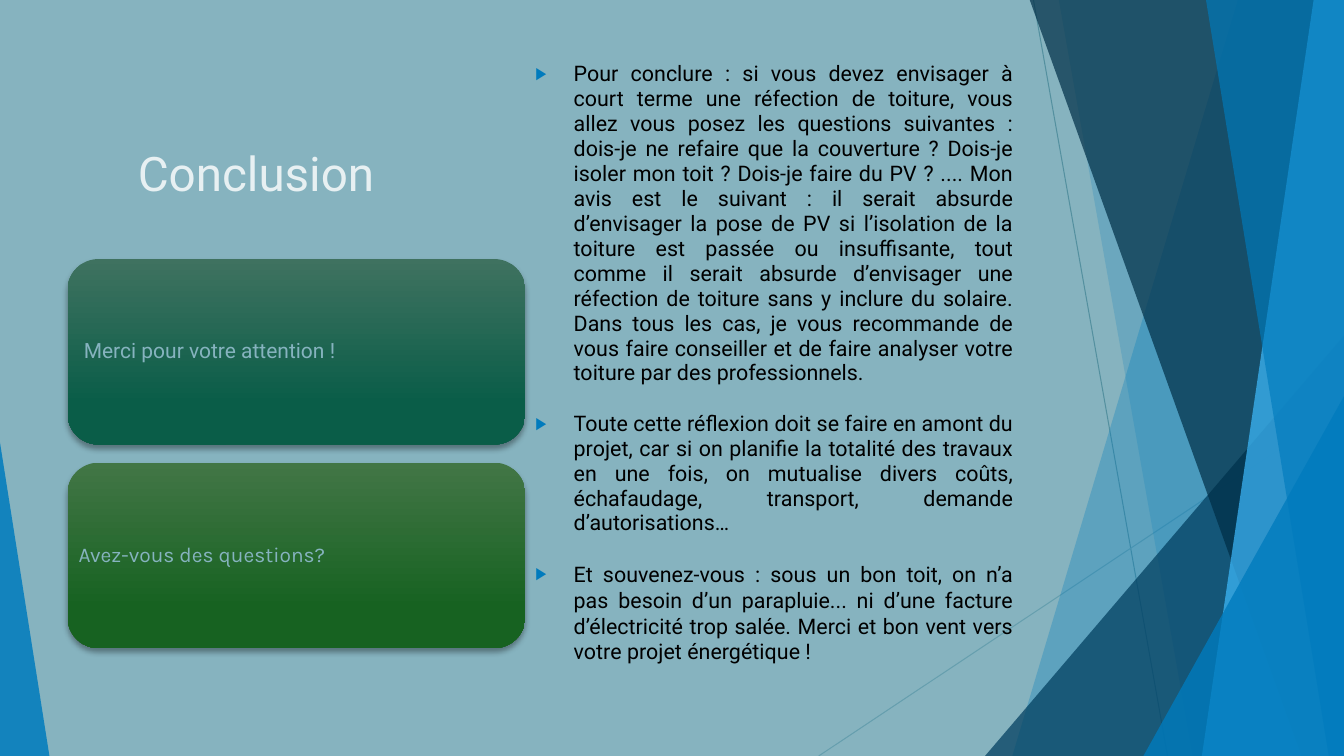
from dataclasses import dataclass

import lxml.etree
import pptx
import pptx.dml.color
import pptx.enum.shapes
import pptx.enum.text
import pptx.oxml.ns
import pptx.util

PX = 9144  # EMU in one px, 100 px to the inch
WIDE, HIGH = 1333, 750
BLUE, MIST = "007BBD", "86B3BF"
FONT = "Roboto"
ALIGN = pptx.enum.text.PP_ALIGN
ANCHOR = pptx.enum.text.MSO_ANCHOR
SHAPE = pptx.enum.shapes.MSO_SHAPE
qn = pptx.oxml.ns.qn


@dataclass
class Band:
    """Strip from the top edge to the bottom edge, by its corner x values."""
    top: tuple[int, int]
    base: tuple[int, int]
    color: str
    alpha: int


@dataclass
class Wedge:
    """Triangle standing on the bottom edge, with its apex at one side."""
    left: int
    top: int
    width: int
    apex: int
    color: str
    alpha: int


@dataclass
class Card:
    text: str
    font: str
    light: str
    dark: str


LINES = [((1025, 0), (1158, HIGH), "54909F"),
         ((WIDE, 403), (812, HIGH), "669FAE")]

DECOR = [
    Band((1228, WIDE), (1004, WIDE), BLUE, 30),
    Band((1050, WIDE), (1183, WIDE), BLUE, 20),
    Wedge(977, 333, 356, 1, "003D5E", 72),
    Band((1021, WIDE), (1291, WIDE), "002E46", 70),
    Band((1303, WIDE), (1192, WIDE), "3EBCFF", 70),
    Band((1196, WIDE), (1318, WIDE), BLUE, 65),
    Wedge(1134, 393, 199, 1, BLUE, 80),
    Wedge(0, 439, 49, 0, BLUE, 85),
]

CARDS = [
    Card(" Merci pour votre attention !", FONT, "3F7260", "0A5D48"),
    Card("Avez-vous des questions?", "Karla", "427646", "176221"),
]

POINTS = [
    "Pour conclure : si vous devez envisager à court terme une réfection de "
    "toiture, vous allez vous posez les questions suivantes : dois-je ne "
    "refaire que la couverture ? Dois-je isoler mon toit ? Dois-je faire du "
    "PV ? .... Mon avis est le suivant : il serait absurde d’envisager la "
    "pose de PV si l’isolation de la toiture est passée ou insuffisante, tout "
    "comme il serait absurde d’envisager une réfection de toiture sans y "
    "inclure du solaire. Dans tous les cas, je vous recommande de vous faire "
    "conseiller et de faire analyser votre toiture par des professionnels.",
    "Toute cette réflexion doit se faire en amont du projet, car si on "
    "planifie la totalité des travaux en une fois, on mutualise divers coûts, "
    "échafaudage, transport, demande d’autorisations…",
    "Et souvenez-vous : sous un bon toit, on n’a pas besoin d’un parapluie... "
    "ni d’une facture d’électricité trop salée. Merci et bon vent vers votre "
    "projet énergétique !",
]


def rgb(color: str) -> pptx.dml.color.RGBColor:
    return pptx.dml.color.RGBColor.from_string(color)


def add_tag(parent, tag: str, **attrs):
    return lxml.etree.SubElement(parent, qn(tag), attrs)


def style(para, font: str, size: float, color: str) -> None:
    for run in para.runs:
        run.font.name = font
        run.font.size = pptx.util.Pt(size)
        run.font.color.rgb = rgb(color)


def paint(shape, color: str, alpha: int) -> None:
    shape.shadow.inherit = False
    shape.fill.solid()
    shape.fill.fore_color.rgb = rgb(color)
    shape.line.fill.background()
    tint = shape.fill._xPr.find(".//" + qn("a:srgbClr"))
    add_tag(tint, "a:alpha", val=str(alpha * 1000))


def add_line(shapes, start: tuple[int, int], end: tuple[int, int], color: str) -> None:
    kind = pptx.enum.shapes.MSO_CONNECTOR.STRAIGHT
    line = shapes.add_connector(kind, *(v * PX for v in start + end))
    line.line.color.rgb = rgb(color)
    line.line.width = pptx.util.Pt(0.75)
    add_tag(line._element.spPr, "a:effectLst")


def add_band(shapes, band: Band) -> None:
    pen = shapes.build_freeform(band.top[0], -1, scale=PX)
    pen.add_line_segments([(band.top[1], -1), (band.base[1], HIGH),
                           (band.base[0], HIGH)], close=True)
    paint(pen.convert_to_shape(), band.color, band.alpha)


def add_wedge(shapes, wedge: Wedge) -> None:
    shape = shapes.add_shape(SHAPE.ISOSCELES_TRIANGLE, wedge.left * PX, wedge.top * PX,
                             wedge.width * PX, (HIGH - wedge.top) * PX)
    shape.adjustments[0] = wedge.apex
    paint(shape, wedge.color, wedge.alpha)


def place(holder, left: int, top: int, width: int, height: int) -> None:
    holder.left, holder.top = left * PX, top * PX
    holder.width, holder.height = width * PX, height * PX
    holder.text_frame.auto_size = pptx.enum.text.MSO_AUTO_SIZE.NONE
    tree = holder._element.getparent()
    tree.append(holder._element)  # bring in front of the decor


def add_title(title) -> None:
    place(title, 43, 110, 422, 94)
    title.text_frame.text = "Conclusion"
    title.text_frame.vertical_anchor = ANCHOR.BOTTOM
    para = title.text_frame.paragraphs[0]
    para.alignment = ALIGN.CENTER
    style(para, FONT, 34, "E7F0F2")


def add_list(body) -> None:
    place(body, 521, 56, 494, 604)
    frame = body.text_frame
    frame.text = "\n".join(POINTS)
    frame.vertical_anchor = ANCHOR.TOP
    last = len(POINTS) - 1
    for i, para in enumerate(frame.paragraphs):
        props = para._p.get_or_add_pPr()
        props.set("marL", str(38 * PX))
        props.set("indent", str(-38 * PX))
        add_tag(add_tag(props, "a:buClr"), "a:srgbClr", val=BLUE)
        add_tag(props, "a:buSzPct", val="80000")
        add_tag(props, "a:buChar", char="▶")
        para.alignment = ALIGN.JUSTIFY
        para.line_spacing = 1.0 if i == last else 0.97
        para.space_before = pptx.util.Pt(10 if i else 0)
        para.space_after = pptx.util.Pt(0 if i == last else 8)
        style(para, FONT, 15.3, "000000")


def add_card(shapes, card: Card, top: int) -> None:
    # Rounded panel with a gradient and a soft shadow
    panel = shapes.add_shape(SHAPE.ROUNDED_RECTANGLE, 67 * PX, top * PX, 454 * PX, 184 * PX)
    panel.line.fill.background()
    panel.fill.gradient()
    panel.fill.gradient_angle = 270
    looks = [(0, card.light), (0.78, card.dark)]
    for stop, (spot, color) in zip(panel.fill.gradient_stops, looks):
        stop.position = spot
        stop.color.rgb = rgb(color)
    panel.shadow.inherit = False
    glow = add_tag(panel._element.spPr.find(qn("a:effectLst")), "a:outerShdw",
                   blurRad=str(pptx.util.Pt(4)), dist=str(pptx.util.Pt(3)),
                   dir="5400000", rotWithShape="0")
    add_tag(add_tag(glow, "a:srgbClr", val="000000"), "a:alpha", val="35000")

    # Label
    label = shapes.add_textbox(72 * PX, (top + 9) * PX, 443 * PX, 166 * PX)
    frame = label.text_frame
    frame.word_wrap = True
    frame.vertical_anchor = ANCHOR.MIDDLE
    frame.margin_left = frame.margin_right = 6 * PX
    frame.margin_top = frame.margin_bottom = 6 * PX
    frame.text = card.text
    frame.paragraphs[0].line_spacing = 0.9
    style(frame.paragraphs[0], card.font, 15, MIST)


def main() -> None:
    deck = pptx.Presentation()
    deck.slide_width, deck.slide_height = WIDE * PX, HIGH * PX
    slide = deck.slides.add_slide(deck.slide_layouts[1])
    slide.background.fill.solid()
    slide.background.fill.fore_color.rgb = rgb(MIST)
    shapes = slide.shapes

    # Decor
    for start, end, color in LINES:
        add_line(shapes, start, end, color)
    for part in DECOR:
        if isinstance(part, Band):
            add_band(shapes, part)
        else:
            add_wedge(shapes, part)

    # Content
    add_title(shapes.title)
    add_list(slide.placeholders[1])
    for i, card in enumerate(CARDS):
        add_card(shapes, card, 257 + 202 * i)

    deck.save("out.pptx")


if __name__ == "__main__":
    main()
